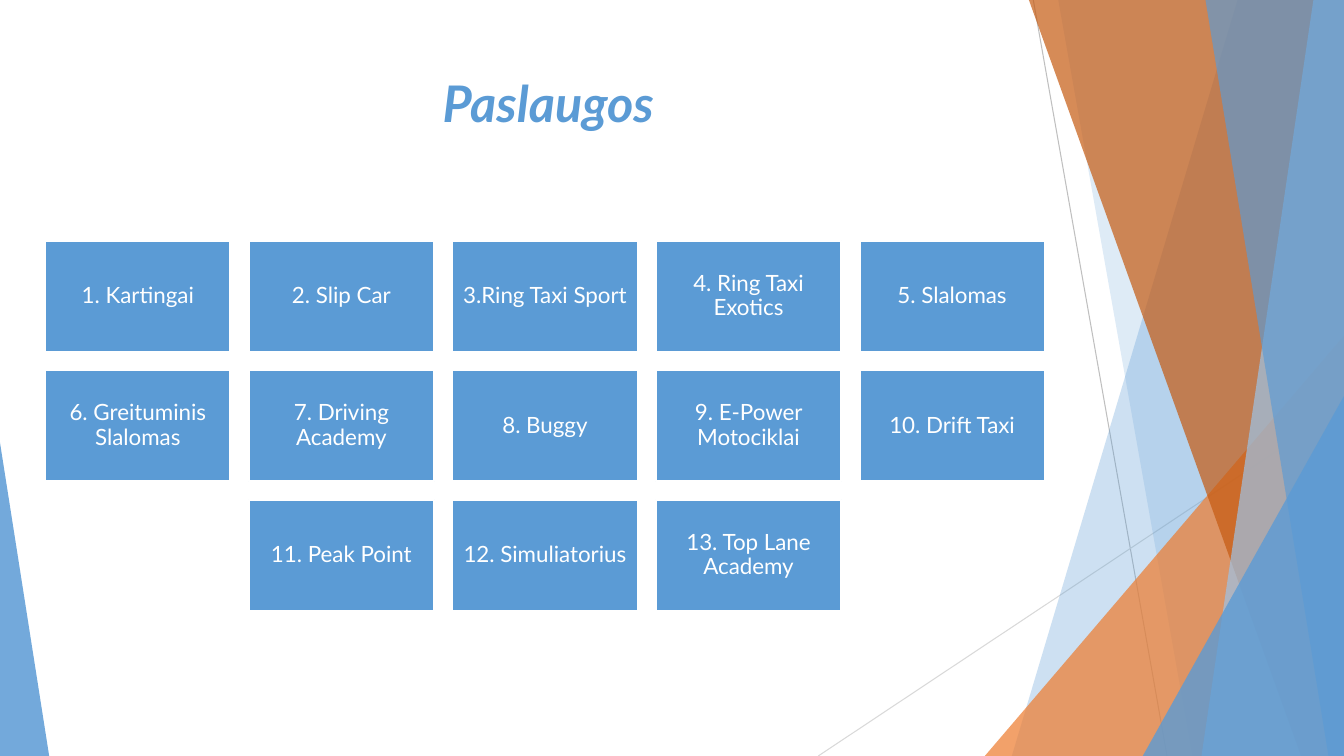
"""Build the "Paslaugos" slide: a grid of services beside faceted side panels."""
from dataclasses import dataclass

from lxml import etree
from pptx import Presentation, util as u
from pptx.dml.color import RGBColor
from pptx.enum import shapes, text
from pptx.oxml.ns import qn


@dataclass(frozen=True)
class Theme:
    font: str = "Lato"
    title_size: int = 36
    service_size: int = 16
    blue: str = "5B9BD5"
    light_blue: str = "9DC3E6"
    orange: str = "ED7D31"
    rust: str = "C55A11"
    grey: str = "BFBFBF"
    light_grey: str = "D9D9D9"
    white: str = "FFFFFF"


WIDTH, HEIGHT = 33.87, 19.05
COLUMNS = 5
SERVICES = [
    "1. Kartingai", "2. Slip Car", "3.Ring Taxi Sport", "4. Ring Taxi Exotics",
    "5. Slalomas", "6. Greituminis Slalomas", "7. Driving Academy", "8. Buggy",
    "9. E-Power Motociklai", "10. Drift Taxi", "11. Peak Point",
    "12. Simuliatorius", "13. Top Lane Academy",
]


class ServicesSlide:
    def __init__(self, slide, theme):
        self.slide = slide
        self.theme = theme

    def _paint(self, shape, colour, opacity=100):
        shape.shadow.inherit = False
        shape.fill.solid()
        shape.fill.fore_color.rgb = RGBColor.from_string(colour)
        shape.line.fill.background()
        if opacity < 100:
            tint = shape.fill._xPr.find(qn("a:solidFill"))[0]
            etree.SubElement(tint, qn("a:alpha"), val=str(opacity * 1000))

    def _write(self, shape, wording, size, colour):
        frame = shape.text_frame
        frame.word_wrap = True
        frame.text = wording
        paragraph = frame.paragraphs[0]
        paragraph.alignment = text.PP_ALIGN.CENTER
        paragraph.font.name = self.theme.font
        paragraph.font.size = u.Pt(size)
        paragraph.font.color.rgb = RGBColor.from_string(colour)
        return frame, paragraph

    def hairline(self, start, end, colour):
        ends = [u.Cm(value) for value in (*start, *end)]
        hairline = self.slide.shapes.add_connector(shapes.MSO_CONNECTOR.STRAIGHT, *ends)
        hairline.line.color.rgb = RGBColor.from_string(colour)
        hairline.line.width = u.Pt(0.75)
        etree.SubElement(hairline._element.spPr, qn("a:effectLst"))

    def panel(self, top_x, foot_x, colour, opacity):
        corners = [(top_x, 0), (WIDTH, 0), (WIDTH, HEIGHT), (foot_x, HEIGHT)]
        start, *others = [(u.Cm(x), u.Cm(y)) for x, y in corners]
        outline = self.slide.shapes.build_freeform(*start)
        outline.add_line_segments(others)
        self._paint(outline.convert_to_shape(), colour, opacity)

    def wedge(self, left, top, width, apex, colour, opacity):
        wedge = self.slide.shapes.add_shape(
            shapes.MSO_SHAPE.ISOSCELES_TRIANGLE,
            u.Cm(left), u.Cm(top), u.Cm(width), u.Cm(HEIGHT - top))
        wedge.adjustments[0] = apex
        self._paint(wedge, colour, opacity)

    def title(self, wording):
        heading = self.slide.shapes.add_textbox(u.Cm(1.88), u.Cm(1.7), u.Cm(23.88), u.Cm(3.66))
        _, paragraph = self._write(heading, wording, self.theme.title_size, self.theme.blue)
        paragraph.font.bold = paragraph.font.italic = True

    def service(self, wording, left, top):
        tile = self.slide.shapes.add_shape(
            shapes.MSO_SHAPE.RECTANGLE, u.Cm(left), u.Cm(top), u.Cm(4.67), u.Cm(2.8))
        self._paint(tile, self.theme.blue)
        tile.line.color.rgb = RGBColor.from_string(self.theme.white)
        tile.line.width = u.Pt(1.5)
        frame, paragraph = self._write(tile, wording, self.theme.service_size, self.theme.white)
        frame.vertical_anchor = text.MSO_ANCHOR.MIDDLE
        frame.margin_left = frame.margin_right = u.Cm(0.17)
        frame.margin_top = frame.margin_bottom = u.Cm(0.17)
        paragraph.line_spacing = 0.9

    def services(self, names):
        for first in range(0, len(names), COLUMNS):
            row = names[first:first + COLUMNS]
            indent = (COLUMNS - len(row)) / 2
            for column, name in enumerate(row):
                self.service(name, 1.14 + 5.13 * (column + indent),
                             6.07 + 3.26 * (first // COLUMNS))


def main():
    deck = Presentation()
    deck.slide_width, deck.slide_height = u.Cm(WIDTH), u.Cm(HEIGHT)
    theme = Theme()
    page = ServicesSlide(deck.slides.add_slide(deck.slide_layouts[6]), theme)

    page.hairline((26.04, 0), (29.41, HEIGHT), theme.grey)
    page.hairline((WIDTH, 10.24), (20.62, HEIGHT), theme.light_grey)
    page.panel(31.19, 25.5, theme.blue, 30)
    page.panel(26.67, 30.05, theme.blue, 20)
    page.wedge(24.82, 8.46, 9.05, 1, theme.orange, 72)
    page.panel(25.93, 32.79, theme.rust, 70)
    page.panel(33.1, 30.28, theme.light_blue, 70)
    page.panel(30.38, 33.48, theme.blue, 65)
    page.wedge(28.8, 9.98, 5.07, 1, theme.blue, 80)
    page.wedge(0, 11.15, 1.24, 0, theme.blue, 85)

    page.title("Paslaugos")
    page.services(SERVICES)
    deck.save("out.pptx")


if __name__ == "__main__":
    main()
